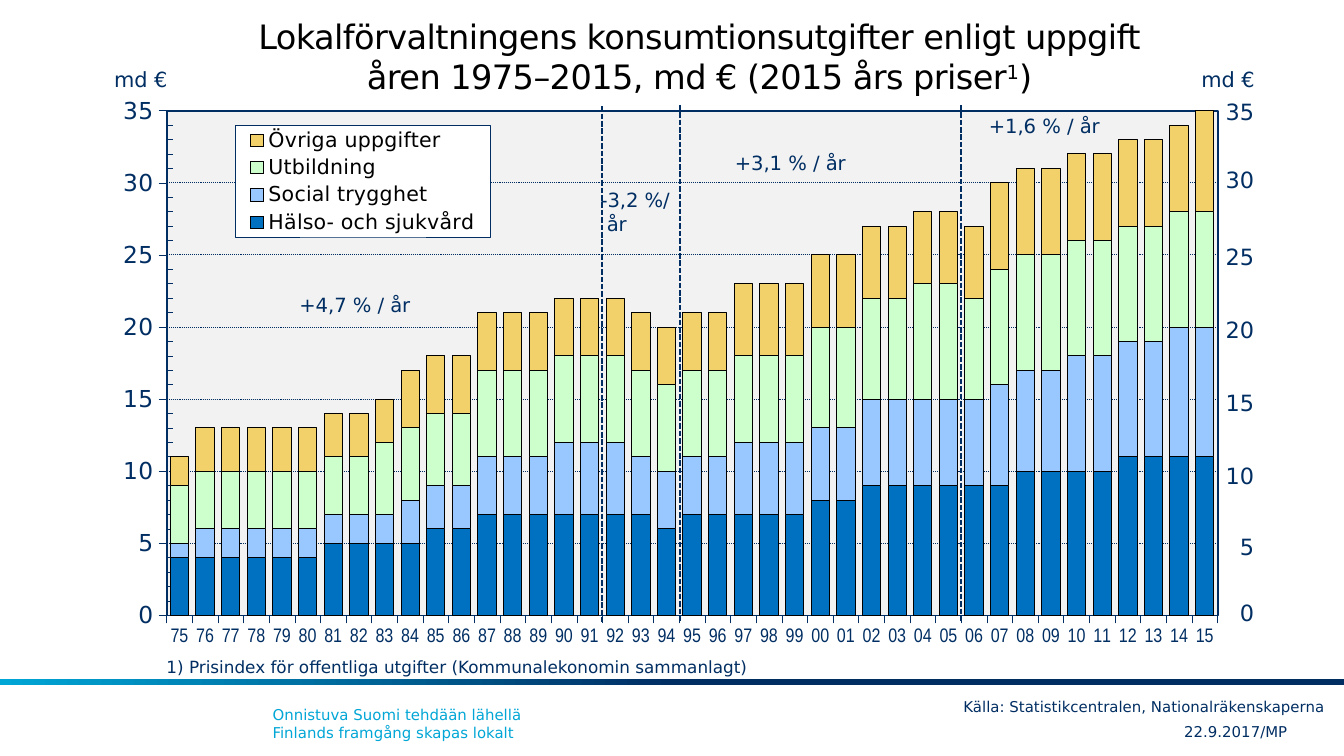
from typing import NamedTuple

from lxml.etree import SubElement
from pptx import Presentation
from pptx.chart.data import CategoryChartData
from pptx.dml.color import RGBColor
from pptx.enum.chart import XL_CHART_TYPE as ChartType
from pptx.enum.chart import XL_LEGEND_POSITION as LegendPosition
from pptx.enum.chart import XL_TICK_MARK as TickMark
from pptx.enum.dml import MSO_LINE as Dash
from pptx.enum.shapes import MSO_CONNECTOR as Connector
from pptx.enum.shapes import MSO_SHAPE as Shape
from pptx.enum.text import MSO_ANCHOR as Anchor
from pptx.enum.text import MSO_AUTO_SIZE as AutoSize
from pptx.enum.text import PP_ALIGN as Align
from pptx.oxml import parse_xml
from pptx.oxml.ns import nsdecls, qn
from pptx.util import Inches, Pt

COLORS = {
    "navy": "002E63", "cyan": "00A6D6", "black": "000000", "white": "FFFFFF",
    "plot": "F2F2F2", "health": "0070C0", "social": "98C8FF",
    "education": "CCFFCC", "other": "F3D16A",
}
FONT = "DejaVu Sans"
CHART_WIDTH, CHART_HEIGHT = 8.39, 4.14


class Label(NamedTuple):
    text: str
    left: float
    top: float
    width: float
    height: float
    size: float
    color: str = "navy"
    align: Align = Align.LEFT
    wrap: bool = False


class Divider(NamedTuple):
    left: float
    top: float


class Series(NamedTuple):
    name: str
    color: str
    values: list[int]


SERIES = [
    Series("Hälso- och sjukvård", "health", [
        4, 4, 4, 4, 4, 4, 5, 5, 5, 5, 6, 6, 7, 7, 7, 7, 7, 7, 7, 6, 7,
        7, 7, 7, 7, 8, 8, 9, 9, 9, 9, 9, 9, 10, 10, 10, 10, 11, 11, 11, 11]),
    Series("Social trygghet", "social", [
        1, 2, 2, 2, 2, 2, 2, 2, 2, 3, 3, 3, 4, 4, 4, 5, 5, 5, 4, 4, 4,
        4, 5, 5, 5, 5, 5, 6, 6, 6, 6, 6, 7, 7, 7, 8, 8, 8, 8, 9, 9]),
    Series("Utbildning", "education", [
        4, 4, 4, 4, 4, 4, 4, 4, 5, 5, 5, 5, 6, 6, 6, 6, 6, 6, 6, 6, 6,
        6, 6, 6, 6, 7, 7, 7, 7, 8, 8, 7, 8, 8, 8, 8, 8, 8, 8, 8, 8]),
    Series("Övriga uppgifter", "other", [
        2, 3, 3, 3, 3, 3, 3, 3, 3, 4, 4, 4, 4, 4, 4, 4, 4, 4, 4, 4, 4,
        4, 5, 5, 5, 5, 5, 5, 5, 5, 5, 5, 6, 6, 6, 6, 6, 6, 6, 6, 7]),
]
RIGHT_AXIS_TOPS = [4.41, 3.92, 3.39, 2.85, 2.3, 1.76, 1.19, 0.68]
LABELS = [
    Label("md €", 0.75, 0.45, 0.61, 0.29, 11.2),
    Label("md €", 8.84, 0.45, 0.61, 0.29, 11.2),
    Label("-3,2 %/\n år", 4.37, 1.35, 0.79, 0.45, 10.5),
    Label("+4,7 % / år", 2.13, 2.13, 1.1, 0.28, 10.5),
    Label("+3,1 % / år", 5.37, 1.07, 1.1, 0.28, 10.5),
    Label("+1,6 % / år", 7.26, 0.8, 1.1, 0.28, 10.5),
    Label("1) Prisindex för offentliga utgifter (Kommunalekonomin sammanlagt)",
          1.14, 4.84, 4.62, 0.25, 9),
    Label("Källa: Statistikcentralen, Nationalräkenskaperna", 7.07, 5.14, 2.93, 0.24, 8),
    Label("Onnistuva Suomi tehdään lähellä\vFinlands framgång skapas lokalt",
          1.93, 5.2, 6.54, 0.37, 8, "cyan", wrap=True),
]
DIVIDERS = [Divider(4.48, 0.79), Divider(5.06, 0.78), Divider(7.15, 0.78)]


def rgb(name: str) -> RGBColor:
    return RGBColor.from_string(COLORS[name])


def style_font(font, size: float, color: str = "navy", name: str = FONT) -> None:
    font.name, font.size, font.bold = name, Pt(size), False
    font.color.rgb = rgb(color)


def style_line(line, color: str, width: float) -> None:
    line.color.rgb = rgb(color)
    line.width = Pt(width)


def add_label(page, label: Label):
    box = page.shapes.add_textbox(*map(Inches, label[1:5]))
    frame = box.text_frame
    frame.text = label.text
    frame.word_wrap = label.wrap
    frame.auto_size = AutoSize.SHAPE_TO_FIT_TEXT
    for para in frame.paragraphs:
        para.alignment = label.align
        for span in para.runs:
            style_font(span.font, label.size, label.color)
    return box


def add_divider(page, divider: Divider) -> None:
    x, top = Inches(divider.left), Inches(divider.top)
    line = page.shapes.add_connector(Connector.STRAIGHT, x, top, x, top + Inches(3.84))
    style_line(line.line, "navy", 1)
    line.line.dash_style = Dash.SQUARE_DOT
    SubElement(line._element.spPr, qn("a:effectLst"))


def place(parent, position: int, left: float, top: float, width: float,
          height: float, target: str = "") -> None:
    """Place a chart part, in inches from the chart's corner."""
    for old in parent.findall(qn("c:layout")):
        parent.remove(old)
    parent.insert(position, parse_xml(
        f'<c:layout {nsdecls("c")}><c:manualLayout>{target}'
        '<c:xMode val="edge"/><c:yMode val="edge"/>'
        f'<c:x val="{left / CHART_WIDTH}"/><c:y val="{top / CHART_HEIGHT}"/>'
        f'<c:w val="{width / CHART_WIDTH}"/><c:h val="{height / CHART_HEIGHT}"/>'
        "</c:manualLayout></c:layout>"))


def area_style(fill: str, width: float):
    return parse_xml(
        f'<c:spPr {nsdecls("c", "a")}><a:solidFill><a:srgbClr val="{COLORS[fill]}"/>'
        f'</a:solidFill><a:ln w="{Pt(width)}"><a:solidFill>'
        f'<a:srgbClr val="{COLORS["navy"]}"/></a:solidFill></a:ln></c:spPr>')


def add_spending_chart(page) -> None:
    data = CategoryChartData(number_format="0")
    data.categories = [f"{year % 100:02d}" for year in range(1975, 2016)]
    for series in SERIES:
        data.add_series(series.name, series.values)
    chart = page.shapes.add_chart(
        ChartType.COLUMN_STACKED,
        *map(Inches, (0.75, 0.72, CHART_WIDTH, CHART_HEIGHT)), data).chart
    chart.has_title = False
    style_font(chart.font, 22.5, name="Arial")
    chart.font.bold = True

    # Columns
    plot = chart.plots[0]
    plot.gap_width, plot.overlap, plot.vary_by_categories = 40, 100, False
    for column, series in zip(plot.series, SERIES):
        column.format.fill.solid()
        column.format.fill.fore_color.rgb = rgb(series.color)
        style_line(column.format.line, "black", 0.5)

    # Axes
    years, amounts = chart.category_axis, chart.value_axis
    for axis in (years, amounts):
        axis.major_tick_mark = TickMark.OUTSIDE
        style_line(axis.format.line, "navy", 0.31)
    style_font(years.tick_labels.font, 10.5, name="Arial Narrow")
    style_font(amounts.tick_labels.font, 12.5)
    skip = parse_xml(f'<c:tickLblSkip {nsdecls("c")} val="1"/>')
    years._element.find(qn("c:noMultiLvlLbl")).addprevious(skip)
    amounts.minimum_scale, amounts.maximum_scale = 0, 35
    amounts.major_unit, amounts.minor_unit = 5, 1
    amounts.minor_tick_mark = TickMark.INSIDE
    amounts.tick_labels.number_format = "0"
    amounts.tick_labels.number_format_is_linked = False
    grid = amounts.major_gridlines.format.line
    style_line(grid, "navy", 0.5)
    grid.dash_style = Dash.ROUND_DOT

    # Plot area and legend
    area = chart._chartSpace.chart.plotArea
    place(area, 0, 0.49, 0.1, 7.82, 3.76, '<c:layoutTarget val="inner"/>')
    area.append(area_style("plot", 1))
    chart.has_legend = True
    legend = chart.legend
    legend.position = LegendPosition.RIGHT
    legend.include_in_layout = False
    style_font(legend.font, 11, "black")
    place(legend._element, 1, 1, 0.21, 1.9, 0.83)
    legend._element.find(qn("c:txPr")).addprevious(area_style("white", 0.5))


def format_title(title) -> None:
    title.left, title.top, title.width, title.height = map(Inches, (1.22, 0.06, 7.97, 0.71))
    frame = title.text_frame
    frame.auto_size, frame.word_wrap = AutoSize.NONE, True
    frame.vertical_anchor = Anchor.BOTTOM
    frame.margin_left = frame.margin_right = 0
    para = frame.paragraphs[0]
    para.text = ("Lokalförvaltningens konsumtionsutgifter enligt uppgift\v"
                 "åren 1975–2015, md € (2015 års priser")
    para.alignment = Align.CENTER
    for text in ("1", ")"):
        para.add_run().text = text
    for span in para.runs:
        style_font(span.font, 18, "black")
        span._r.get_or_add_rPr().set("spc", "-30")
    para.runs[-2]._r.get_or_add_rPr().set("baseline", "30000")


def main() -> None:
    deck = Presentation()
    deck.slide_width, deck.slide_height = Inches(10), Inches(10) * 9 // 16
    page = deck.slides.add_slide(deck.slide_layouts[5])
    format_title(page.shapes.title)

    # Footer band
    band = page.shapes.add_shape(Shape.RECTANGLE, *map(Inches, (0, 5.05, 10, 0.05)))
    band.shadow.inherit = False
    band.line.fill.background()
    band.fill.gradient()
    band.fill.gradient_angle = 180
    for stop, position, color in zip(band.fill.gradient_stops, (0.5, 1), ("navy", "cyan")):
        stop.position, stop.color.rgb = position, rgb(color)

    add_spending_chart(page)
    for divider in DIVIDERS:
        add_divider(page, divider)

    # Right-hand scale, aligned on its right edge
    for step, top in enumerate(RIGHT_AXIS_TOPS):
        text = str(5 * step)
        width = 0.2 + 0.11 * len(text)
        add_label(page, Label(text, 9.43 - width, top, width, 0.3, 12, align=Align.RIGHT))
    for label in LABELS:
        add_label(page, label)

    # Date
    date = add_label(page, Label("22.9.2017/MP", 8.7, 5.33, 0.99, 0.22, 8,
                                 align=Align.CENTER, wrap=True)).text_frame
    date.auto_size, date.vertical_anchor = AutoSize.NONE, Anchor.MIDDLE
    date.margin_left = date.margin_right = date.margin_top = date.margin_bottom = 0

    deck.save("out.pptx")


if __name__ == "__main__":
    main()
